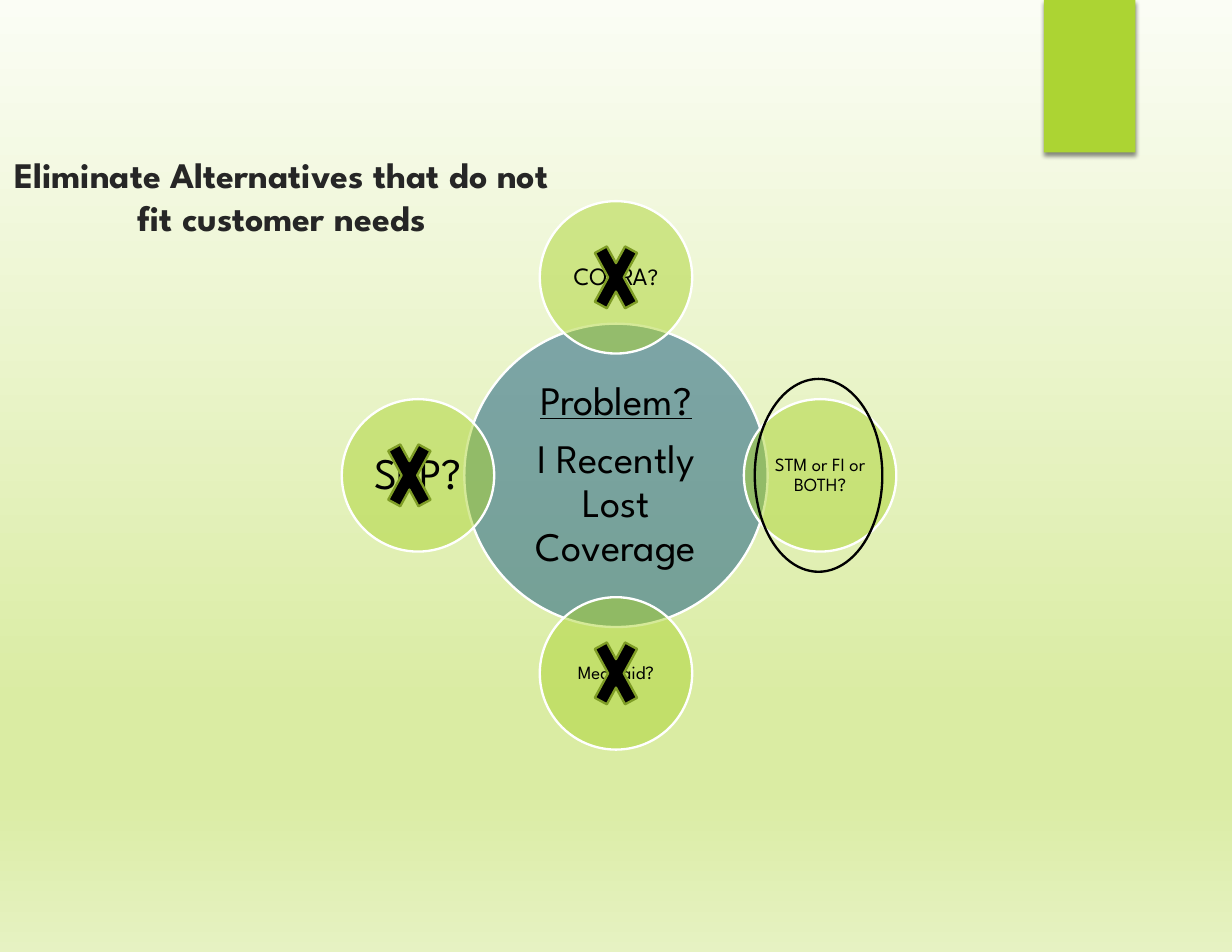
"""Build the slide that eliminates coverage alternatives around a central problem."""
from dataclasses import dataclass

import pptx
import pptx.dml.color
import pptx.enum.shapes
import pptx.enum.text
import pptx.oxml
import pptx.oxml.ns
import pptx.util

Pt = pptx.util.Pt
RGB = pptx.dml.color.RGBColor
Shapes = pptx.enum.shapes.MSO_SHAPE
Text = pptx.enum.text
qn = pptx.oxml.ns.qn


@dataclass(frozen=True)
class Theme:
    """Colours and type sizes of the slide."""
    font: str = "League Spartan"
    accent: str = "ACD433"
    hub: str = "0E5580"
    white: str = "FFFFFF"
    black: str = "000000"
    cross_edge: str = "7F9D26"
    heading: str = "262626"
    backdrop: tuple = ((0, "FBFDF5"), (74, "DAECA3"), (83, "DAECA3"), (100, "E6F2C2"))
    heading_size: float = 23.1
    hub_size: float = 26
    line: float = 1.5


@dataclass(frozen=True)
class Span:
    """A run of text with its size."""
    text: str
    size: float
    underline: bool = False


@dataclass(frozen=True)
class Option:
    """An alternative placed relative to the hub, crossed out or kept."""
    spans: tuple
    dx: float
    dy: float
    inset: float
    crossed: bool = True
    mark_shift: float = 0


THEME = Theme()
CENTER_X, CENTER_Y = 396, 305.6
HUB_SIZE, OPTION_SIZE, REACH = 195, 98, 127.3
CROSS_WIDTH, CROSS_HEIGHT = 37.4, 68.4
RING_WIDTH, RING_HEIGHT = 82, 124

PROBLEM = (
    (Span("Problem?", THEME.hub_size, True),),
    (Span("I Recently Lost Coverage", THEME.hub_size),),
)
OPTIONS = (
    Option((Span("COBRA", 16), Span("?", 15)), 0, -REACH, 1.4),
    Option((Span("STM or FI or BOTH?", 12),), 131.2, 0, 1.4, crossed=False, mark_shift=-1),
    Option((Span("Medicaid?", 12),), 0, REACH, 1.4),
    Option((Span("SEP?", 28),), -REACH, 0, 2.8, mark_shift=-5.5),
)


def xml(source: str):
    """Parse a drawing element."""
    head, tail = source.split(" ", 1)
    return pptx.oxml.parse_xml(f"{head} {pptx.oxml.ns.nsdecls('a')} {tail}")


def paint_background(page) -> None:
    """Fill the page with the vertical gradient."""
    fill = page.background.fill
    fill.gradient()
    fill.gradient_angle = 270
    stops = next(page._element.iter(qn("a:gsLst")))
    for stop in list(stops):
        stops.remove(stop)
    for place, color in THEME.backdrop:
        stops.append(xml(f'<a:gs pos="{place * 1000}"><a:srgbClr val="{color}"/></a:gs>'))


def add_centered(page, kind, x: float, y: float, width: float, height: float,
                 fill: str | None, line: str | None):
    """Add a preset shape centred on a point."""
    shape = page.shapes.add_shape(kind, Pt(x - width / 2), Pt(y - height / 2), Pt(width), Pt(height))
    shape.shadow.inherit = False
    if fill:
        shape.fill.solid()
        shape.fill.fore_color.rgb = RGB.from_string(fill)
    else:
        shape.fill.background()
    if line:
        shape.line.color.rgb = RGB.from_string(line)
        shape.line.width = Pt(THEME.line)
    else:
        shape.line.fill.background()
    return shape


def set_insets(frame, across: float, down: float) -> None:
    """Set the horizontal and vertical margins of a text frame."""
    frame.margin_left = frame.margin_right = Pt(across)
    frame.margin_top = frame.margin_bottom = Pt(down)


def add_span(para, span: Span, color: str):
    """Add a formatted run to a paragraph."""
    run = para.add_run()
    run.text = span.text
    run.font.name = THEME.font
    run.font.size = Pt(span.size)
    run.font.underline = span.underline or None
    run.font.color.rgb = RGB.from_string(color)
    return run


def add_circle(page, x: float, y: float, size: float, fill: str, paras: tuple, inset: float) -> None:
    """Add a translucent circle with centred text."""
    circle = add_centered(page, Shapes.OVAL, x, y, size, size, fill, THEME.white)
    color = circle._element.spPr.find(qn("a:solidFill"))[0]
    color.append(xml('<a:alpha val="50000"/>'))
    frame = circle.text_frame
    frame.word_wrap = True
    frame.vertical_anchor = Text.MSO_ANCHOR.MIDDLE
    set_insets(frame, inset, inset)
    for index, spans in enumerate(paras):
        para = frame.add_paragraph() if index else frame.paragraphs[0]
        para.alignment = Text.PP_ALIGN.CENTER
        para.line_spacing = 0.9
        if index:
            para.space_before = Pt(9.1)
        for span in spans:
            add_span(para, span, THEME.black)


def add_mark(page, option: Option) -> None:
    """Cross out a rejected option or ring the one that is kept."""
    x, y = CENTER_X + option.dx + option.mark_shift, CENTER_Y + option.dy
    if option.crossed:
        add_centered(page, Shapes.MATH_MULTIPLY, x, y, CROSS_WIDTH, CROSS_HEIGHT,
                     THEME.black, THEME.cross_edge)
    else:
        add_centered(page, Shapes.OVAL, x, y, RING_WIDTH, RING_HEIGHT, None, THEME.black)


def add_corner_tab(page) -> None:
    """Add the shadowed tab at the top edge."""
    tab = add_centered(page, Shapes.RECTANGLE, 700.5, 49, 59, 98, THEME.accent, None)
    tab._element.spPr.find(qn("a:effectLst")).append(xml(
        f'<a:outerShdw blurRad="{Pt(3)}" dist="{Pt(2)}" dir="5400000" rotWithShape="0">'
        f'<a:srgbClr val="{THEME.black}"><a:alpha val="45000"/></a:srgbClr></a:outerShdw>'))


def set_title(page, text: str) -> None:
    """Place and format the title."""
    title = page.shapes.title
    title.left, title.top, title.width, title.height = Pt(-6), Pt(95), Pt(374.4), Pt(62)
    frame = title.text_frame
    frame.word_wrap = True
    frame.auto_size = Text.MSO_AUTO_SIZE.NONE
    frame.vertical_anchor = Text.MSO_ANCHOR.TOP
    set_insets(frame, 6, 3)
    para = frame.paragraphs[0]
    para.alignment = Text.PP_ALIGN.CENTER
    run = add_span(para, Span(text, THEME.heading_size), THEME.heading)
    run.font.bold = True
    run.font._element.insert(0, xml(
        f'<a:ln w="{Pt(1.06)}"><a:solidFill><a:srgbClr val="{THEME.white}"/></a:solidFill></a:ln>'))


def main() -> None:
    """Build and save the deck."""
    deck = pptx.Presentation()
    deck.slide_width, deck.slide_height = Pt(792), Pt(612)
    page = deck.slides.add_slide(deck.slide_layouts[5])
    paint_background(page)
    set_title(page, "Eliminate Alternatives that do not fit customer needs")
    add_corner_tab(page)
    add_circle(page, CENTER_X, CENTER_Y, HUB_SIZE, THEME.hub, PROBLEM, 2.8)
    for option in OPTIONS:
        add_circle(page, CENTER_X + option.dx, CENTER_Y + option.dy, OPTION_SIZE,
                   THEME.accent, (option.spans,), option.inset)
    for option in OPTIONS:
        add_mark(page, option)
    deck.save("out.pptx")


if __name__ == "__main__":
    main()
